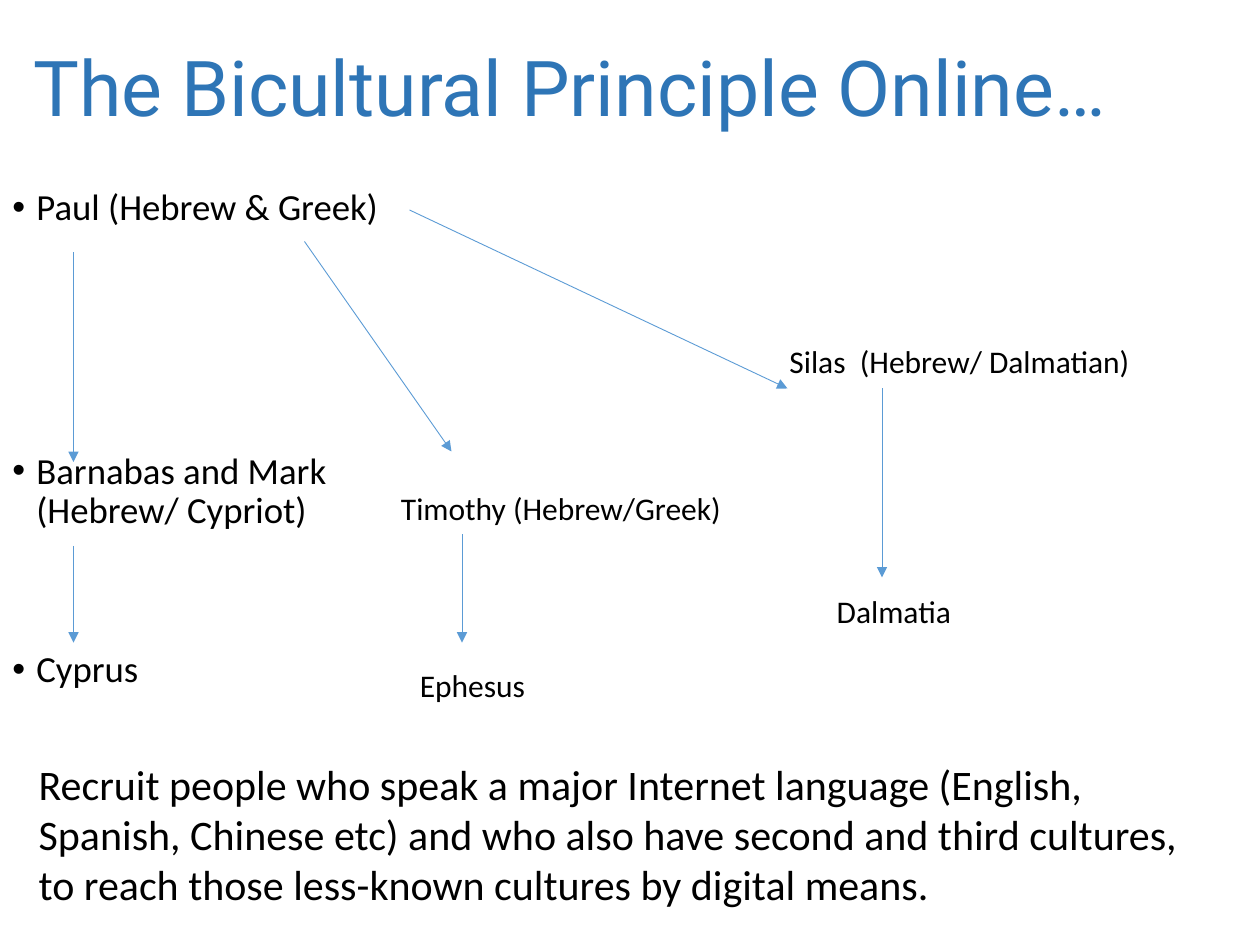
import dataclasses

import pptx
import pptx.dml.color
import pptx.enum.shapes
import pptx.enum.text
import pptx.oxml.ns
import pptx.util
from lxml import etree

COLUMNS, ROWS = 120, 90
CELL = pptx.util.Inches(10) / COLUMNS


@dataclasses.dataclass(frozen=True)
class Theme:
    """Colours, fonts and type sizes of the slide."""
    title_color: str = "2E75B6"
    text_color: str = "000000"
    arrow_color: str = "5B9BD5"
    title_font: str = "Roboto"
    text_font: str = "Calibri"
    title_size: int = 44
    message_size: int = 24
    list_size: int = 21
    label_size: int = 18
    arrow_width: float = 0.5


THEME = Theme()

# Text and the space before it, in points
MISSION_LIST = [
    ("Paul (Hebrew & Greek)", 7.5),
    ("Barnabas and Mark\v(Hebrew/ Cypriot)", 128),
    ("Cyprus", 68),
]

# Text, column, row, width in columns
LABELS = [
    ("Silas  (Hebrew/ Dalmatian)", 74, 32, 39),
    ("Dalmatia", 78.5, 55.8, 15),
    ("Timothy (Hebrew/Greek)", 37, 46, 34),
    ("Ephesus", 38.8, 62.8, 17),
]

# Start column and row, end column and row
ARROWS = [
    (39, 20, 75, 37),
    (84, 37, 84, 55),
    (7, 24, 7, 44),
    (7, 52, 7, 61.2),
    (29, 23, 43, 43),
    (44, 50.9, 44, 61.2),
]

MESSAGE = (
    "Recruit people who speak a major Internet language (English, Spanish, "
    "Chinese etc) and who also have second and third cultures, to reach "
    "those less-known cultures by digital means."
)


def grid(*cells):
    """Turn grid counts into slide lengths."""
    return [pptx.util.Emu(round(cell * CELL)) for cell in cells]


def add_text(slide, lines, area, size, font=THEME.text_font, color=THEME.text_color):
    """Add a wrapping text box with one paragraph a line."""
    text_frame = slide.shapes.add_textbox(*grid(*area)).text_frame
    text_frame.word_wrap = True
    text_frame.text = lines[0]
    for line in lines[1:]:
        text_frame.add_paragraph().text = line
    for paragraph in text_frame.paragraphs:
        for run in paragraph.runs:
            run.font.name = font
            run.font.size = pptx.util.Pt(size)
            run.font.color.rgb = pptx.dml.color.RGBColor.from_string(color)
    return text_frame


def add_title(slide, text):
    """Add the slide title, centred vertically in its band."""
    text_frame = add_text(slide, [text], (2, 0, 109.8, 17.4), THEME.title_size,
                          THEME.title_font, THEME.title_color)
    text_frame.vertical_anchor = pptx.enum.text.MSO_ANCHOR.MIDDLE
    text_frame.paragraphs[0].line_spacing = 0.9


def add_bullets(slide, items, area):
    """Add a bulleted list with its own gap before each item."""
    text_frame = add_text(slide, [text for text, _ in items], area, THEME.list_size)
    indent = pptx.util.Inches(0.19)
    for paragraph, (_, gap) in zip(text_frame.paragraphs, items):
        paragraph.line_spacing = 0.9
        paragraph.space_before = pptx.util.Pt(gap)
        properties = paragraph._p.get_or_add_pPr()
        properties.set("marL", str(indent))
        properties.set("indent", str(-indent))
        font = etree.SubElement(properties, pptx.oxml.ns.qn("a:buFont"))
        font.set("typeface", "Arial")
        bullet = etree.SubElement(properties, pptx.oxml.ns.qn("a:buChar"))
        bullet.set("char", "•")


def add_arrow(slide, ends):
    """Add a thin straight arrow between two grid points."""
    arrow = slide.shapes.add_connector(
        pptx.enum.shapes.MSO_CONNECTOR.STRAIGHT, *grid(*ends))
    arrow.line.color.rgb = pptx.dml.color.RGBColor.from_string(THEME.arrow_color)
    arrow.line.width = pptx.util.Pt(THEME.arrow_width)
    head = etree.SubElement(arrow.line._get_or_add_ln(), pptx.oxml.ns.qn("a:tailEnd"))
    head.set("type", "triangle")
    etree.SubElement(arrow._element.spPr, pptx.oxml.ns.qn("a:effectLst"))


def main():
    """Build and save the slide."""
    presentation = pptx.Presentation()
    presentation.slide_width, presentation.slide_height = grid(COLUMNS, ROWS)
    slide = presentation.slides.add_slide(presentation.slide_layouts[6])
    add_title(slide, "The Bicultural Principle Online…")
    add_bullets(slide, MISSION_LIST, (0, 17.4, 116, 67))
    for ends in ARROWS:
        add_arrow(slide, ends)
    for text, column, row, width in LABELS:
        add_text(slide, [text], (column, row, width, 4.8), THEME.label_size)
    add_text(slide, [MESSAGE], (2.5, 71.6, 111, 15.7), THEME.message_size)
    presentation.save("out.pptx")


main()
